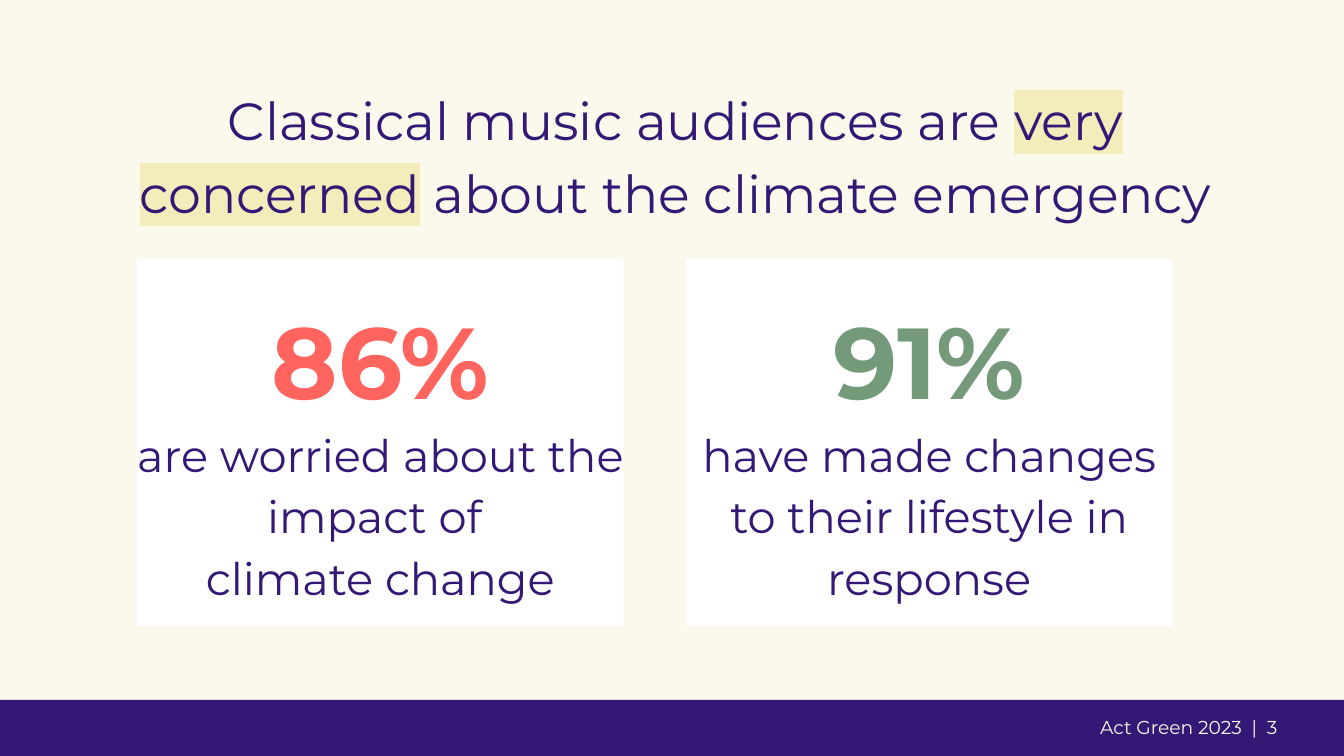
"""Build a slide on how classical music audiences see the climate emergency."""
from lxml import etree
from pptx import Presentation
from pptx.dml.color import RGBColor
from pptx.enum import shapes, text
from pptx.oxml import ns
from pptx.util import Cm, Pt

INK, CREAM, WHITE, GLOW = "331975", "FBF8EC", "FFFFFF", "F3EDBB"
CORAL, SAGE = "FF645E", "759A79"


def color(code):
    """Turn a hex string into a colour."""
    return RGBColor.from_string(code)


def write(para, words, size=24, ink=INK, bold=False, glow=None, face="Montserrat"):
    """Add formatted text to a paragraph, with a line break at each newline."""
    for row, part in enumerate(words.split("\n")):
        if row:
            para.add_line_break()
        run = para.add_run()
        run.text = part
        font = run.font
        font.size, font.bold, font.name = Pt(size), bold, face
        font.color.rgb = color(ink)
        if glow:
            mark = etree.Element(ns.qn("a:highlight"))
            etree.SubElement(mark, ns.qn("a:srgbClr"), val=glow)
            run.font.fill._xPr.find(ns.qn("a:solidFill")).addnext(mark)


class Deck:
    """Hold the style and the current slide."""

    def __init__(self, wide, high):
        """Start a deck with one title-only slide."""
        self.file = Presentation()
        self.file.slide_width, self.file.slide_height = Cm(wide), Cm(high)
        self.slide = self.file.slides.add_slide(self.file.slide_layouts[5])
        back = self.slide.background.fill
        back.solid()
        back.fore_color.rgb = color(CREAM)

    def frame(self, shape, inset=0, anchor=text.MSO_ANCHOR.MIDDLE):
        """Set wrapping, margins and anchor of a shape's text."""
        body = shape.text_frame
        body.word_wrap, body.auto_size = True, text.MSO_AUTO_SIZE.NONE
        body.vertical_anchor = anchor
        body.margin_left = body.margin_right = Cm(inset)
        body.margin_top = body.margin_bottom = Cm(inset)
        return body

    def para(self, para, align=text.PP_ALIGN.CENTER, line=1.15):
        """Set alignment and line spacing of a paragraph."""
        para.alignment, para.line_spacing = align, line
        return para

    def title(self, box, parts):
        """Place the title and write its plain and highlighted parts."""
        head = self.slide.shapes.title
        head.left, head.top, head.width, head.height = map(Cm, box)
        body = self.frame(head, anchor=text.MSO_ANCHOR.TOP)
        para = self.para(body.paragraphs[0])
        for words, glow in parts:
            write(para, words, size=28, glow=glow)

    def rect(self, box, fill):
        """Draw a plain rectangle."""
        shape = self.slide.shapes.add_shape(
            shapes.MSO_SHAPE.RECTANGLE, *map(Cm, box))
        shape.shadow.inherit = False
        shape.fill.solid()
        shape.fill.fore_color.rgb = color(fill)
        shape.line.fill.background()
        return shape

    def card(self, box, stat, ink, words):
        """Draw a card with a large figure above its message."""
        body = self.frame(self.rect(box, WHITE))
        write(self.para(body.paragraphs[0]), stat, size=54, ink=ink, bold=True)
        write(self.para(body.add_paragraph()), words)

    def label(self, box, words):
        """Write the small footer text."""
        body = self.frame(self.slide.shapes.add_textbox(*map(Cm, box)), 0.25)
        para = self.para(body.paragraphs[0], text.PP_ALIGN.RIGHT, 1.0)
        write(para, words, size=10, ink=CREAM)


def main():
    """Build and save the slide."""
    deck = Deck(25.4, 14.29)
    deck.rect((-0.08, 13.23, 25.58, 1.12), INK)
    deck.title((2.01, 1.5, 21.51, 2.51), [
        ("Classical music audiences are ", None),
        ("very concerned", GLOW),
        (" about the climate emergency", None),
    ])
    deck.label((19.74, 13.23, 4.65, 1.04), "Act Green 2023  |  3")
    cards = [
        ("86%", CORAL, "are worried about the impact of \nclimate change"),
        ("91%", SAGE, "have made changes to their lifestyle in response"),
    ]
    for col, card in enumerate(cards):
        deck.card((2.59 + col * 10.37, 4.9, 9.2, 6.93), *card)
    deck.file.save("out.pptx")


if __name__ == "__main__":
    main()
